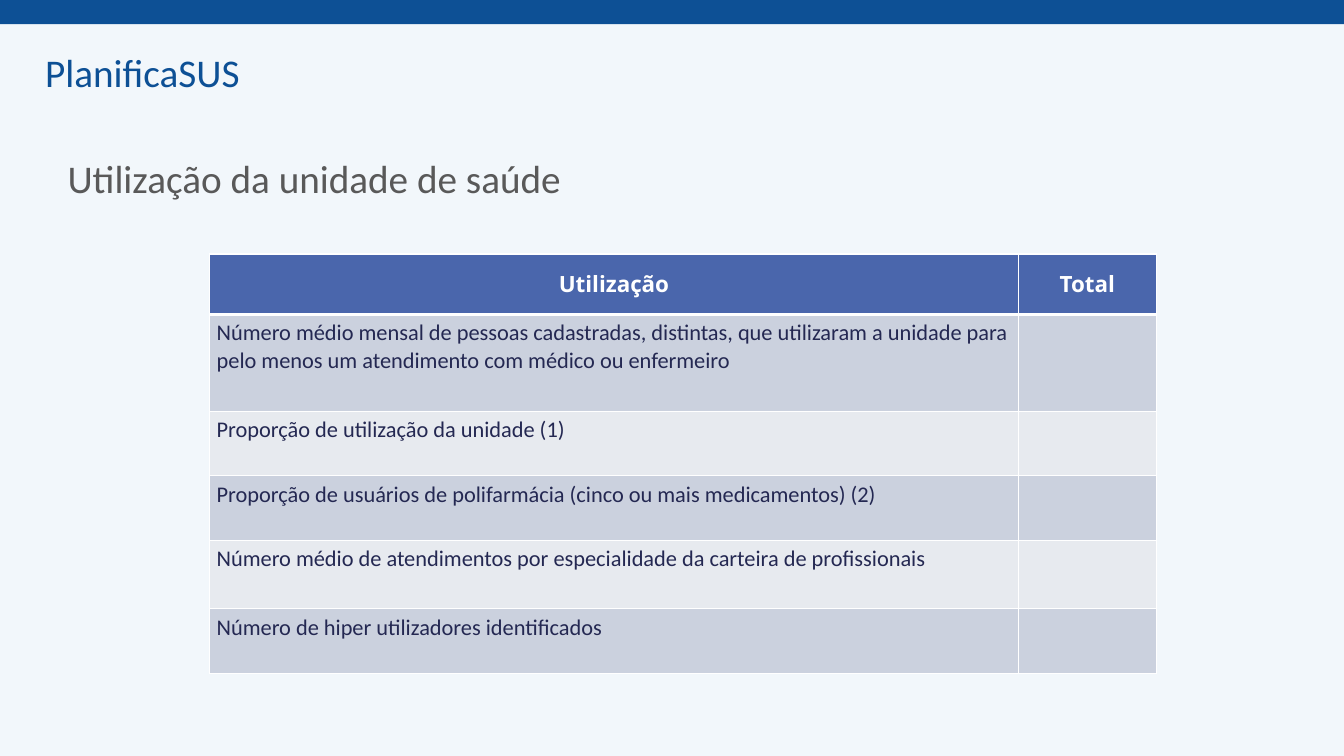
from lxml import etree
from pptx import Presentation
from pptx.dml.color import RGBColor
from pptx.enum.shapes import MSO_SHAPE as Shape
from pptx.enum.text import MSO_ANCHOR as Anchor, PP_ALIGN as Align
from pptx.oxml.ns import qn
from pptx.util import Inches, Pt

WIDTH, HEIGHT = 13.33, 7.5
PALE_BLUE = RGBColor(0xF2, 0xF7, 0xFB)
BRAND_BLUE = RGBColor(0x0D, 0x50, 0x95)
GREY = RGBColor(0x59, 0x59, 0x59)
HEADER_BLUE = RGBColor(0x4A, 0x66, 0xAC)
NAVY = RGBColor(0x24, 0x28, 0x52)
WHITE = RGBColor(0xFF, 0xFF, 0xFF)
BANDS = RGBColor(0xCB, 0xD1, 0xDE), RGBColor(0xE7, 0xEA, 0xEF)

COLUMN_WIDTHS = 8.02, 1.37
ROW_HEIGHTS = 0.6, 0.96, 0.64, 0.64, 0.68, 0.64
HEADINGS = "Utilização", "Total"
INDICATORS = (
    "Número médio mensal de pessoas cadastradas, distintas, que utilizaram a "
    "unidade para pelo menos um atendimento com médico ou enfermeiro",
    "Proporção de utilização da unidade (1)",
    "Proporção de usuários de polifarmácia (cinco ou mais medicamentos) (2)",
    "Número médio de atendimentos por especialidade da carteira de profissionais",
    "Número de hiper utilizadores identificados",
)


def add_run(paragraph, text, size, font, color, bold=False):
    run = paragraph.add_run()
    run.text = text
    run.font.size = Pt(size)
    run.font.name = font
    run.font.bold = bold
    run.font.color.rgb = color


def set_borders(cell, top, bottom):
    """Draw white cell borders; top and bottom are widths in points."""
    properties = cell._tc.get_or_add_tcPr()
    widths = {"a:lnL": 1, "a:lnR": 1, "a:lnT": top, "a:lnB": bottom}
    for position, (side, width) in enumerate(widths.items()):
        line = etree.Element(qn(side), w=str(Pt(width)))
        fill = etree.SubElement(line, qn("a:solidFill"))
        etree.SubElement(fill, qn("a:srgbClr"), val=str(WHITE))
        properties.insert(position, line)


def add_banner(slide, left, top, width, height):
    """Place the top strip and the programme name below it."""
    strip = slide.shapes.add_shape(
        Shape.RECTANGLE, Inches(left), Inches(top), Inches(width), Inches(height))
    strip.shadow.inherit = False
    strip.fill.solid()
    strip.fill.fore_color.rgb = BRAND_BLUE
    strip.line.fill.background()

    programme = slide.shapes.add_textbox(
        Inches(left + 0.35), Inches(top + 0.43), Inches(2.15), Inches(0.57))
    programme.text_frame.word_wrap = False
    add_run(programme.text_frame.paragraphs[0], "PlanificaSUS", 28, "Calibri", BRAND_BLUE)


def add_title(slide, left, top, width, height):
    title = slide.shapes.title
    title.left, title.top = Inches(left), Inches(top)
    title.width, title.height = Inches(width), Inches(height)
    frame = title.text_frame
    frame.margin_left = Inches(0.19)
    frame.vertical_anchor = Anchor.MIDDLE
    paragraph = frame.paragraphs[0]
    paragraph.alignment = Align.LEFT
    paragraph.line_spacing = 0.9
    add_run(paragraph, "Utilização da unidade de saúde", 28, "Calibri", GREY)


def add_usage_table(slide, left, top):
    rows = [HEADINGS] + [(indicator, "") for indicator in INDICATORS]
    table = slide.shapes.add_table(
        len(rows), len(HEADINGS), Inches(left), Inches(top),
        Inches(sum(COLUMN_WIDTHS)), Inches(sum(ROW_HEIGHTS))).table
    for column, width in zip(table.columns, COLUMN_WIDTHS):
        column.width = Inches(width)
    for number, (row, height, texts) in enumerate(zip(table.rows, ROW_HEIGHTS, rows)):
        row.height = Inches(height)
        is_header = number == 0
        for cell, text in zip(row.cells, texts):
            cell.margin_left = cell.margin_right = Inches(0.07)
            cell.margin_top = cell.margin_bottom = Inches(0.05)
            cell.fill.solid()
            cell.fill.fore_color.rgb = HEADER_BLUE if is_header else BANDS[(number - 1) % 2]
            set_borders(cell, 3 if number == 1 else 1, 3 if is_header else 1)
            paragraph = cell.text_frame.paragraphs[0]
            if is_header:
                cell.vertical_anchor = Anchor.MIDDLE
                paragraph.alignment = Align.CENTER
                add_run(paragraph, text, 16, "Open Sans", WHITE, bold=True)
            elif text:
                add_run(paragraph, text, 16, "Calibri", NAVY)


def main():
    deck = Presentation()
    deck.slide_width, deck.slide_height = Inches(WIDTH), Inches(HEIGHT)
    slide = deck.slides.add_slide(deck.slide_layouts.get_by_name("Title Only"))
    slide.background.fill.solid()
    slide.background.fill.fore_color.rgb = PALE_BLUE
    add_banner(slide, 0, 0, WIDTH, 0.24)
    add_title(slide, 0.48, 1.07, 10.99, 1.45)
    add_usage_table(slide, 2.08, 2.52)
    deck.save("out.pptx")


if __name__ == "__main__":
    main()
